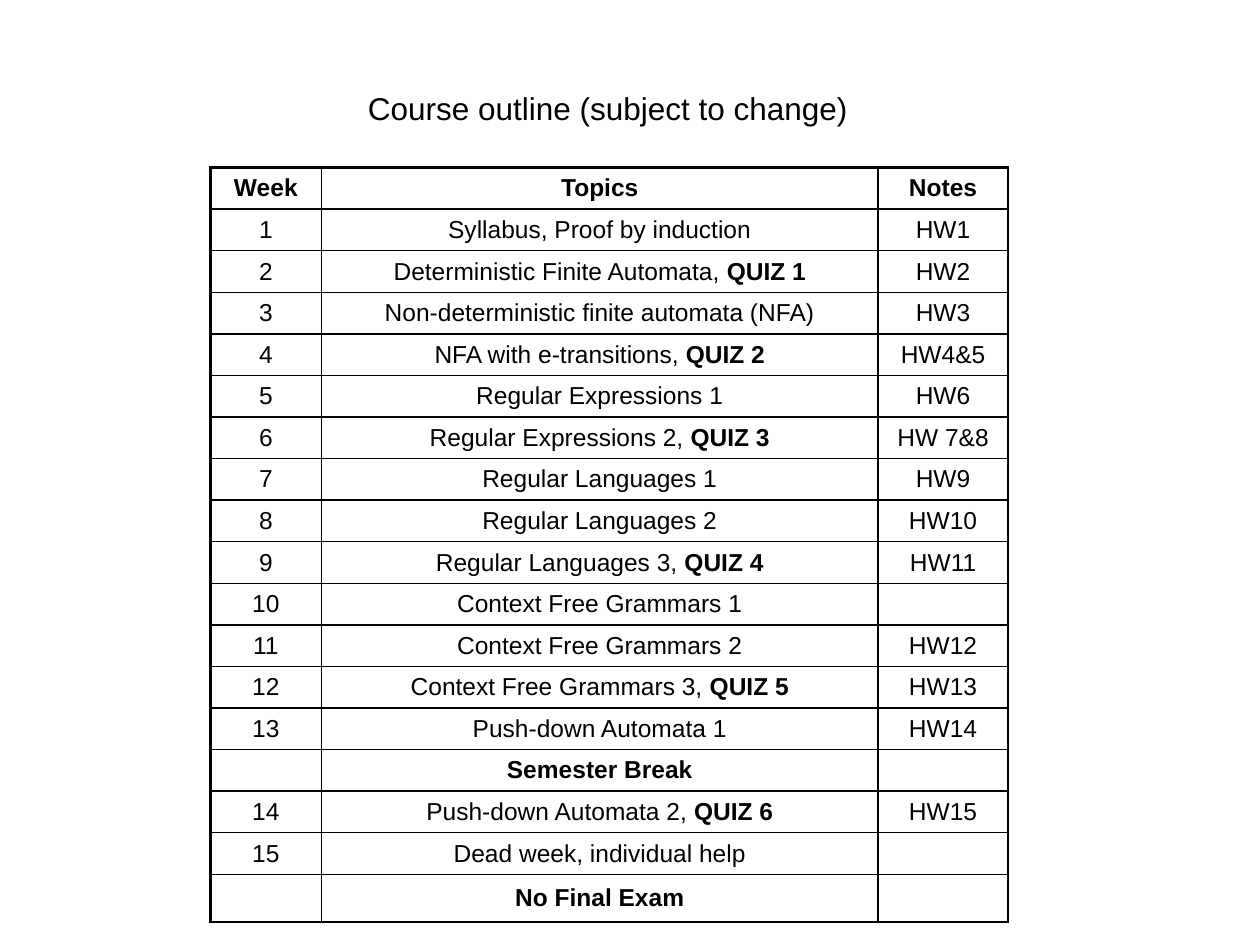
import itertools

import pptx
import pptx.dml.color
import pptx.enum.text
import pptx.oxml.ns
import pptx.util
from lxml import etree

BLACK = pptx.dml.color.RGBColor(0, 0, 0)
FONT = "Arial"
TITLE_SIZE, TABLE_SIZE = 18, 14
THIN, HEAVY = 1, 1.5

SLIDE_WIDTH, SLIDE_HEIGHT = 10, 7.5
TITLE_BOX = (2.82, 0.66, 4.62, 0.4)
TABLE_LEFT, TABLE_TOP = 1.67, 1.33
ROW_HEIGHT, LAST_ROW_HEIGHT = 0.33, 0.38
MARGIN_X, MARGIN_Y = 0.02, 0.01

TITLE = "Course outline (subject to change)"
COLUMN_WIDTHS = {"Week": 0.88, "Topics": 4.42, "Notes": 1.03}
BREAK = "Semester Break"
SCHEDULE = [
    ("Syllabus, Proof by induction", "", "HW1"),
    ("Deterministic Finite Automata, ", "QUIZ 1", "HW2"),
    ("Non-deterministic finite automata (NFA)", "", "HW3"),
    ("NFA with e-transitions, ", "QUIZ 2", "HW4&5"),
    ("Regular Expressions 1", "", "HW6"),
    ("Regular Expressions 2, ", "QUIZ 3", "HW 7&8"),
    ("Regular Languages 1", "", "HW9"),
    ("Regular Languages 2", "", "HW10"),
    ("Regular Languages 3, ", "QUIZ 4", "HW11"),
    ("Context Free Grammars 1", "", ""),
    ("Context Free Grammars 2", "", "HW12"),
    ("Context Free Grammars 3, ", "QUIZ 5", "HW13"),
    ("Push-down Automata 1", "", "HW14"),
    ("", BREAK, ""),
    ("Push-down Automata 2, ", "QUIZ 6", "HW15"),
    ("Dead week, individual help", "", ""),
    ("", "No Final Exam", ""),
]


def add_run(p, text, size, bold=False):
    r = p.add_run()
    r.text = text
    r.font.name = FONT
    r.font.size = pptx.util.Pt(size)
    r.font.bold = bold
    r.font.color.rgb = BLACK


def add_title(s, text):
    sp = s.shapes.title
    sp.left, sp.top, sp.width, sp.height = map(pptx.util.Inches, TITLE_BOX)
    tf = sp.text_frame
    tf.word_wrap = False
    tf.auto_size = pptx.enum.text.MSO_AUTO_SIZE.NONE
    tf.vertical_anchor = pptx.enum.text.MSO_ANCHOR.TOP
    p = tf.paragraphs[0]
    p.alignment = pptx.enum.text.PP_ALIGN.LEFT
    add_run(p, text, TITLE_SIZE)


def schedule_rows():
    rows = [[[(name, True)] for name in COLUMN_WIDTHS]]
    week_numbers = itertools.count(1)
    for topic, event, notes in SCHEDULE:
        week = str(next(week_numbers)) if topic else ""
        rows.append([[(week, False)],
                     [(topic, False), (event, True)],
                     [(notes, False)]])
    return rows


def heavy_row_edges():
    events = [event for topic, event, notes in SCHEDULE]
    above_header, below_header = 0, 1
    below_break = below_header + events.index(BREAK) + 1
    below_table = below_header + len(SCHEDULE)
    return {above_header, below_header, below_break, below_table}


def edge_widths(index, heavy_edges):
    return [HEAVY if edge in heavy_edges else THIN
            for edge in (index, index + 1)]


def set_borders(cell, widths):
    tcPr = cell._tc.get_or_add_tcPr()
    for side, width in zip("LRTB", widths):
        ln = etree.SubElement(tcPr, pptx.oxml.ns.qn(f"a:ln{side}"),
                              w=str(pptx.util.Pt(width)))
        fill = etree.SubElement(ln, pptx.oxml.ns.qn("a:solidFill"))
        etree.SubElement(fill, pptx.oxml.ns.qn("a:srgbClr"), val=str(BLACK))


def fill_cell(cell, runs):
    cell.margin_left = cell.margin_right = pptx.util.Inches(MARGIN_X)
    cell.margin_top = cell.margin_bottom = pptx.util.Inches(MARGIN_Y)
    cell.vertical_anchor = pptx.enum.text.MSO_ANCHOR.MIDDLE
    cell.fill.background()
    p = cell.text_frame.paragraphs[0]
    p.alignment = pptx.enum.text.PP_ALIGN.CENTER
    for text, bold in runs:
        if text:
            add_run(p, text, TABLE_SIZE, bold)


def add_grid(s, widths, heights):
    box = (TABLE_LEFT, TABLE_TOP, sum(widths), sum(heights))
    table = s.shapes.add_table(len(heights), len(widths),
                               *map(pptx.util.Inches, box)).table
    table.first_row = table.horz_banding = False
    for column, width in zip(table.columns, widths):
        column.width = pptx.util.Inches(width)
    for row, height in zip(table.rows, heights):
        row.height = pptx.util.Inches(height)
    return table


def add_schedule(s):
    widths = list(COLUMN_WIDTHS.values())
    heights = [ROW_HEIGHT] * len(SCHEDULE) + [LAST_ROW_HEIGHT]
    table = add_grid(s, widths, heights)
    row_edges, column_edges = heavy_row_edges(), {0, len(widths)}
    for i, row in enumerate(schedule_rows()):
        for j, runs in enumerate(row):
            cell = table.cell(i, j)
            set_borders(cell, edge_widths(j, column_edges)
                        + edge_widths(i, row_edges))
            fill_cell(cell, runs)


def main():
    prs = pptx.Presentation()
    prs.slide_width = pptx.util.Inches(SLIDE_WIDTH)
    prs.slide_height = pptx.util.Inches(SLIDE_HEIGHT)
    title_only = prs.slide_layouts.get_by_name("Title Only")
    s = prs.slides.add_slide(title_only)
    add_title(s, TITLE)
    add_schedule(s)
    prs.save("out.pptx")


if __name__ == "__main__":
    main()
